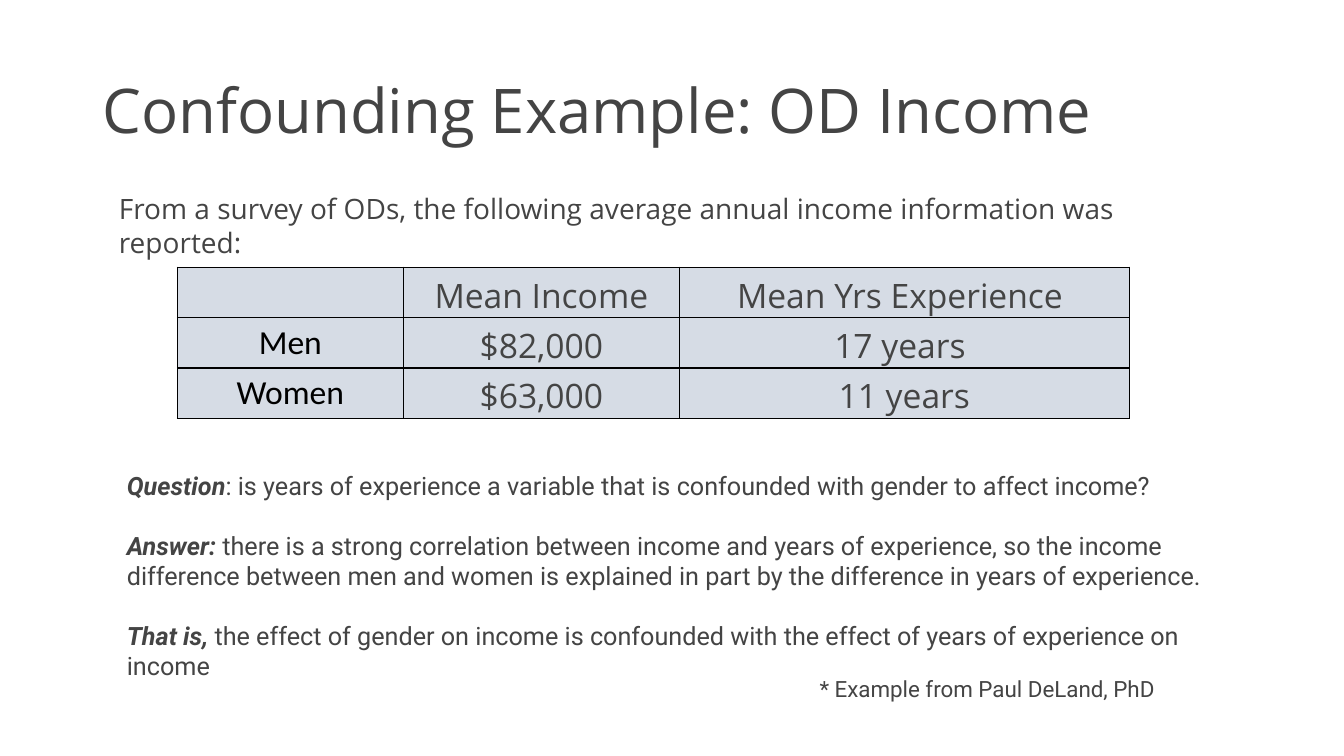
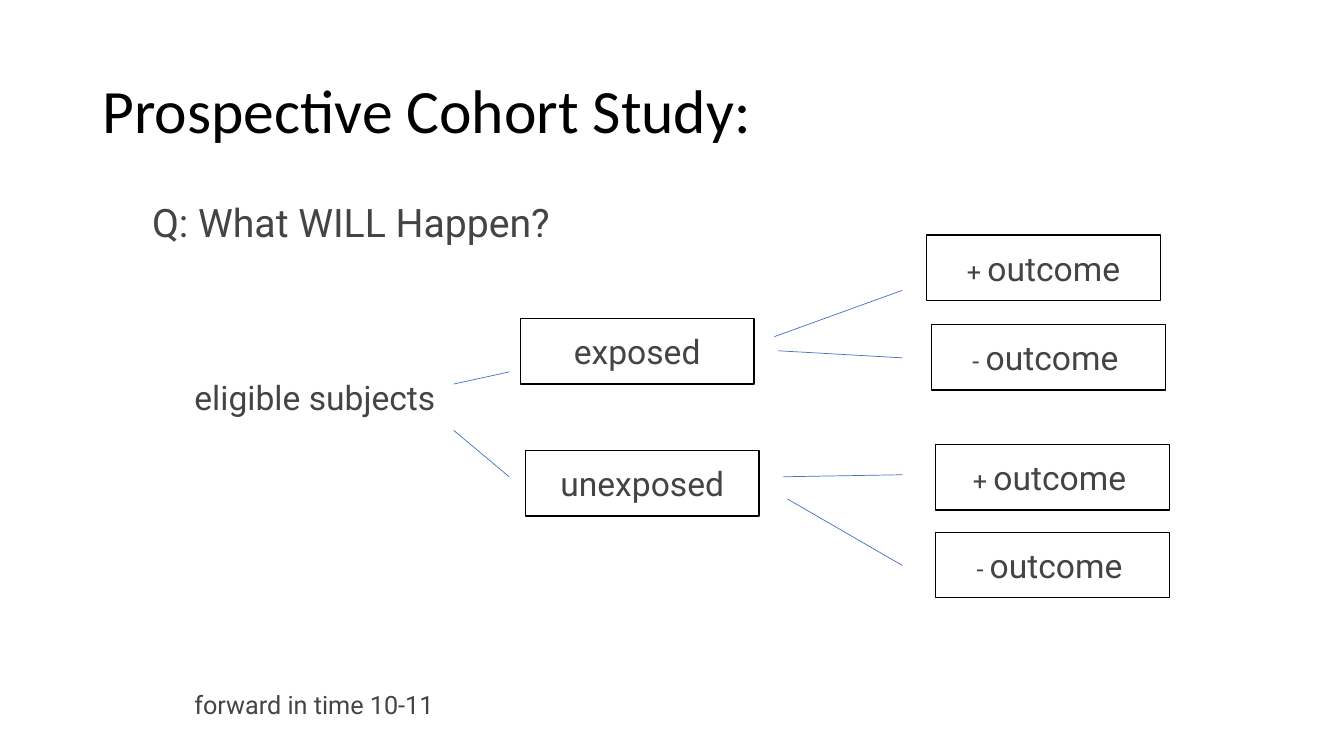
from typing import NamedTuple

from lxml import etree
from pptx import Presentation
from pptx import util as u
from pptx.dml.color import RGBColor
from pptx.enum import shapes, text
from pptx.oxml import ns

# Shared look: 100 px to the inch
PX = 9144
GREY, BLACK, WHITE = "444444", "000000", "FFFFFF"
CELL, BLUE = "D6DCE5", "4472C4"
ROBOTO, OPEN, CALIBRI = "Roboto", "Open Sans", "Calibri"
LEFT, CENTER = text.PP_ALIGN.LEFT, text.PP_ALIGN.CENTER
BOX_W, BOX_H = 232, 65


class Run(NamedTuple):
    words: str
    size: int
    font: str = ROBOTO
    color: str = GREY
    strong: bool = False


class Box(NamedTuple):
    left: int
    top: int
    runs: list[Run]


class Line(NamedTuple):
    x1: int
    y1: int
    x2: int
    y2: int


def px(n: int) -> u.Emu:
    return u.Emu(n * PX)


def rgb(color: str) -> RGBColor:
    return RGBColor.from_string(color)


def add_runs(p, runs: list[Run], align=LEFT) -> None:
    p.alignment = align
    for run in runs:
        r = p.add_run()
        r.text = run.words
        f = r.font
        f.size, f.name = u.Pt(run.size), run.font
        f.bold = f.italic = run.strong
        f.color.rgb = rgb(run.color)


def add_text(s, left: int, top: int, width: int, height: int,
             paragraphs: list[list[Run]], gap: int = 0):
    tf = s.shapes.add_textbox(px(left), px(top), px(width), px(height)).text_frame
    tf.word_wrap = True
    for i, runs in enumerate(paragraphs):
        p = tf.add_paragraph() if i else tf.paragraphs[0]
        if i:
            p.space_before = u.Pt(gap)
        add_runs(p, runs)
    return tf


def add_slide(prs, title: str, font: str, color: str):
    s = prs.slides.add_slide(prs.slide_layouts[6])
    tf = add_text(s, 92, 40, 1150, 145, [[Run(title, 44, font, color)]])
    tf.vertical_anchor = text.MSO_ANCHOR.MIDDLE
    tf.paragraphs[0].line_spacing = 0.9
    return s


def add_border(cell) -> None:
    tc_pr = cell._tc.get_or_add_tcPr()
    for i, side in enumerate(("lnL", "lnR", "lnT", "lnB")):
        ln = etree.Element(ns.qn(f"a:{side}"), w=str(u.Pt(1)))
        fill = etree.SubElement(ln, ns.qn("a:solidFill"))
        etree.SubElement(fill, ns.qn("a:srgbClr"), val=BLACK)
        tc_pr.insert(i, ln)


def add_table(s, left: int, top: int, widths: list[int], row_h: int,
              rows: list[list[str]]) -> None:
    table = s.shapes.add_table(len(rows), len(widths), px(left), px(top),
                               px(sum(widths)), px(row_h * len(rows))).table
    table.first_row = table.horz_banding = False
    for col, width in zip(table.columns, widths):
        col.width = px(width)
    for i, row in enumerate(rows):
        table.rows[i].height = px(row_h)
        for j, words in enumerate(row):
            cell = table.cell(i, j)
            cell.fill.solid()
            cell.fill.fore_color.rgb = rgb(CELL)
            add_border(cell)
            if words:
                font, color = (OPEN, GREY) if j else (CALIBRI, BLACK)
                add_runs(cell.text_frame.paragraphs[0],
                         [Run(words, 24, font, color)], CENTER)


def add_box(s, box: Box) -> None:
    sp = s.shapes.add_shape(shapes.MSO_SHAPE.RECTANGLE, px(box.left), px(box.top),
                            px(BOX_W), px(BOX_H))
    sp.shadow.inherit = False
    sp.fill.solid()
    sp.fill.fore_color.rgb = rgb(WHITE)
    sp.line.color.rgb = rgb(BLACK)
    sp.line.width = u.Pt(1)
    tf = sp.text_frame
    tf.word_wrap = True
    tf.vertical_anchor = text.MSO_ANCHOR.MIDDLE
    add_runs(tf.paragraphs[0], box.runs, CENTER)


def add_line(s, line: Line) -> None:
    c = s.shapes.add_connector(shapes.MSO_CONNECTOR.STRAIGHT, *map(px, line))
    c.line.color.rgb = rgb(BLUE)
    c.line.width = u.Pt(0.5)
    etree.SubElement(c._element.spPr, ns.qn("a:effectLst"))


def outcome(sign: str, tail: str = " ") -> list[Run]:
    runs = [Run(f"{sign} ", 18), Run("outcome", 24)]
    return runs + [Run(tail, 18)] if tail else runs


def income_slide(prs) -> None:
    s = add_slide(prs, "Confounding Example: OD Income", OPEN, GREY)
    add_text(s, 108, 185, 1079, 44, [[Run(
        "From a survey of ODs, the following average annual income information "
        "was reported:", 20, OPEN)]])
    add_table(s, 176, 265, [224, 274, 446], 50, [
        ["", "Mean Income", "Mean Yrs Experience "],
        ["Men", "$82,000", "17 years "],
        ["Women", "$63,000", "11 years"],
    ])
    add_text(s, 803, 665, 366, 37, [[Run("* Example from Paul DeLand, PhD", 16)]])

    # Discussion: a bold lead-in, then the statement
    points = [
        ("Question", ": is years of experience a variable that is confounded with "
                     "gender to affect income?"),
        ("Answer: ", "there is a strong correlation between income and years of "
                     "experience, so the income difference between men and women is "
                     "explained in part by the difference in years of experience."),
        ("That is, ", "the effect of gender on income is confounded with the effect "
                      "of years of experience on income"),
    ]
    add_text(s, 116, 462, 1141, 222,
             [[Run(lead, 18, strong=True), Run(rest, 18)] for lead, rest in points],
             gap=21)


def cohort_slide(prs) -> None:
    s = add_slide(prs, "Prospective Cohort Study:", CALIBRI, BLACK)
    add_text(s, 141, 192, 436, 57, [[Run("Q: What WILL Happen?", 28)]])
    add_text(s, 183, 369, 268, 50, [[Run("eligible subjects", 24)]])
    add_text(s, 183, 679, 667, 39, [[Run("forward in time 10-11", 18)]])

    # Groups and their outcomes
    for box in (
        Box(516, 316, [Run("exposed", 24)]),
        Box(521, 447, [Run("unexposed", 24)]),
        Box(919, 233, outcome("+", "")),
        Box(924, 322, outcome("-")),
        Box(928, 441, outcome("+")),
        Box(928, 528, outcome("-")),
    ):
        add_box(s, box)

    # Branches
    for line in (
        Line(450, 381, 505, 369),
        Line(450, 427, 505, 473),
        Line(768, 334, 895, 288),
        Line(772, 348, 895, 355),
        Line(777, 473, 895, 471),
        Line(781, 495, 895, 561),
    ):
        add_line(s, line)


def main() -> None:
    prs = Presentation()
    prs.slide_width, prs.slide_height = px(1333), px(750)
    income_slide(prs)
    cohort_slide(prs)
    prs.save("out.pptx")


if __name__ == "__main__":
    main()
